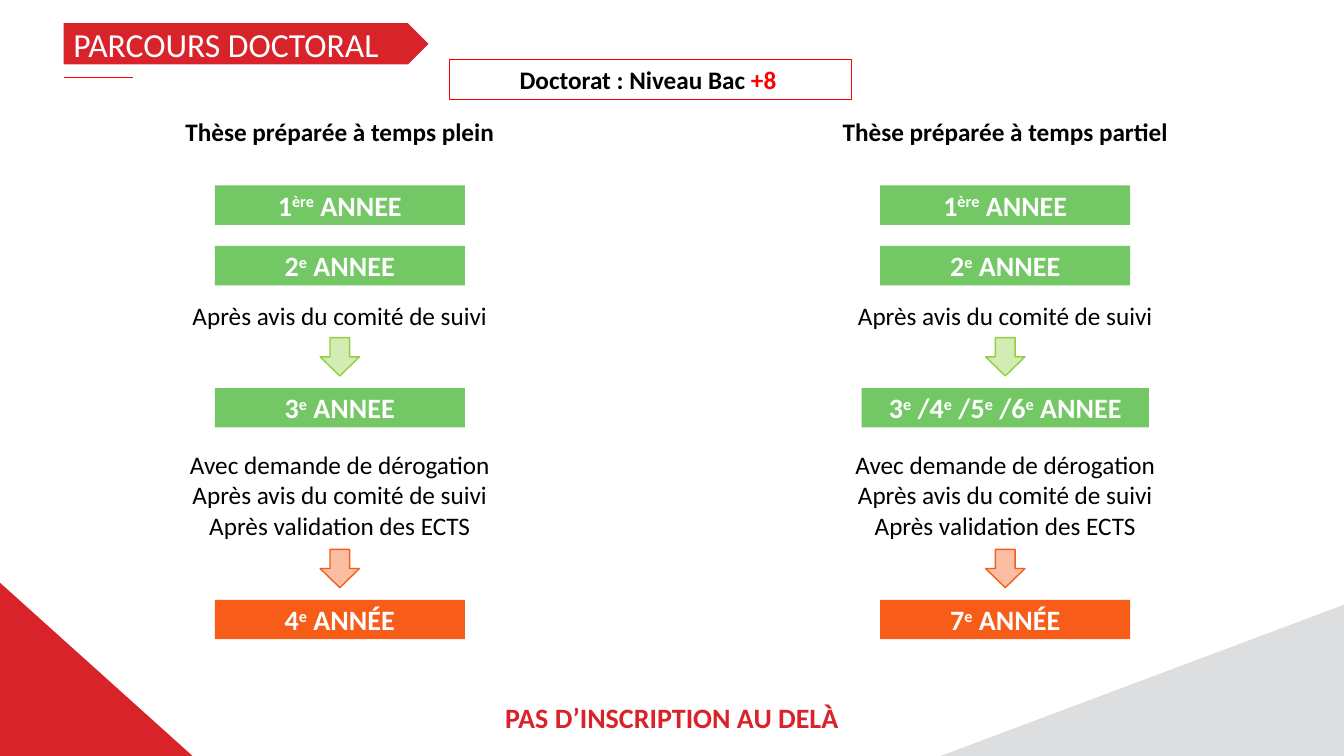
"""Build the doctoral path slide: full-time and part-time thesis timelines."""
from dataclasses import dataclass
from typing import NamedTuple, Optional

from lxml import etree
from pptx import Presentation
from pptx.dml import color
from pptx.enum import shapes, text
from pptx.oxml import ns
from pptx.util import Inches, Pt


@dataclass(frozen=True)
class Theme:
    """Colours and type sizes of the slide."""
    font: str = "Calibri"
    title: int = 24
    strong: int = 20
    body: int = 18
    red: str = "D8232A"
    bright_red: str = "FF0000"
    grey: str = "DCDEE0"
    green: str = "73C764"
    orange: str = "F75C19"
    pale_green: str = "D3ECB3"
    green_edge: str = "90CF40"
    pale_orange: str = "FCBEA3"
    black: str = "000000"
    white: str = "FFFFFF"


THEME = Theme()


class Box(NamedTuple):
    """Left, top, width and height in inches."""
    left: float
    top: float
    width: float
    height: float


class Style(NamedTuple):
    """Type style; marked segments take the accent colour or are raised."""
    size: int
    colour: str
    bold: bool = False
    centred: bool = True
    accent: Optional[str] = None


class Year(NamedTuple):
    """One year bar of a timeline."""
    label: str
    top: float
    fill: str
    width: float = 2.48


class Arrow(NamedTuple):
    """One down arrow between two years."""
    top: float
    fill: str
    edge: str


class Timeline(NamedTuple):
    """One column: heading, centre line and year bars."""
    heading: str
    centre: float
    years: tuple[Year, ...]


TITLE = Style(THEME.title, THEME.white, centred=False)
YEAR = Style(THEME.strong, THEME.white, bold=True)
HEADING = Style(THEME.body, THEME.black, bold=True)
LEVEL = Style(THEME.body, THEME.black, bold=True, accent=THEME.bright_red)
CONDITION = Style(THEME.body, THEME.black)
CLOSING = Style(THEME.strong, THEME.red, bold=True)

FIRST_YEARS = (Year("1^ère^ ANNEE", 1.84, THEME.green),
               Year("2^e^ ANNEE", 2.44, THEME.green))
TIMELINES = (
    Timeline("Thèse préparée à temps plein", 3.37, FIRST_YEARS + (
        Year("3^e^ ANNEE", 3.85, THEME.green),
        Year("4^e^ ANNÉE", 5.95, THEME.orange))),
    Timeline("Thèse préparée à temps partiel", 9.97, FIRST_YEARS + (
        Year("3^e^ /4^e^ /5^e^ /6^e^ ANNEE", 3.85, THEME.green, 2.85),
        Year("7^e^ ANNÉE", 5.95, THEME.orange))),
)
ARROWS = (Arrow(3.35, THEME.pale_green, THEME.green_edge),
          Arrow(5.45, THEME.pale_orange, THEME.orange))
REVIEW = "Après avis du comité de suivi"
EXTENSION = f"Avec demande de dérogation\n{REVIEW}\nAprès validation des ECTS"


def rgb(code: str) -> color.RGBColor:
    """Return the colour for a hex code."""
    return color.RGBColor.from_string(code)


def centred_box(centre: float, top: float, width: float, height: float) -> Box:
    """Return a box centred on a vertical line."""
    return Box(centre - width / 2, top, width, height)


def write(frame, content: str, style: Style) -> None:
    """Write lines of text whose segments between carets are marked."""
    frame.text = "\n" * content.count("\n")
    for paragraph, line in zip(frame.paragraphs, content.split("\n")):
        paragraph.alignment = (text.PP_ALIGN.CENTER if style.centred
                               else text.PP_ALIGN.LEFT)
        for index, segment in enumerate(line.split("^")):
            run = paragraph.add_run()
            run.text = segment
            run.font.name, run.font.size = THEME.font, Pt(style.size)
            run.font.bold = style.bold
            marked = index % 2 == 1
            run.font.color.rgb = rgb(style.accent if marked and style.accent
                                     else style.colour)
            if marked and not style.accent:
                run.font._element.set("baseline", "30000")


def add_block(slide, kind, box: Box, fill: Optional[str] = None,
              edge: Optional[str] = None, weight: float = 1):
    """Add a flat preset shape."""
    block = slide.shapes.add_shape(kind, *map(Inches, box))
    block.shadow.inherit = False
    if fill:
        block.fill.solid()
        block.fill.fore_color.rgb = rgb(fill)
    else:
        block.fill.background()
    if edge:
        block.line.color.rgb = rgb(edge)
        block.line.width = Pt(weight)
    else:
        block.line.fill.background()
    return block


def add_words(slide, box: Box, content: str, style: Style) -> None:
    """Add a text box without wrapping."""
    words = slide.shapes.add_textbox(*map(Inches, box))
    words.text_frame.word_wrap = False
    write(words.text_frame, content, style)


def draw_timeline(slide, timeline: Timeline) -> None:
    """Draw one column of years, conditions and arrows."""
    centre = timeline.centre
    add_words(slide, centred_box(centre, 1.11, 3.99, 0.4), timeline.heading, HEADING)
    for year in timeline.years:
        bar = add_block(slide, shapes.MSO_SHAPE.RECTANGLE,
                        centred_box(centre, year.top, year.width, 0.39), year.fill)
        bar.text_frame.vertical_anchor = text.MSO_ANCHOR.MIDDLE
        write(bar.text_frame, year.label, YEAR)
    add_words(slide, centred_box(centre, 2.93, 3.15, 0.31), REVIEW, CONDITION)
    add_words(slide, centred_box(centre, 4.41, 3.21, 1.01), EXTENSION, CONDITION)
    for arrow in ARROWS:
        add_block(slide, shapes.MSO_SHAPE.DOWN_ARROW,
                  centred_box(centre, arrow.top, 0.39, 0.38), arrow.fill, arrow.edge)


def draw_frame(slide) -> None:
    """Draw the corner triangles, the title banner and its rule."""
    add_block(slide, shapes.MSO_SHAPE.RIGHT_TRIANGLE, Box(0, 5.79, 1.9, 1.71),
              THEME.red, THEME.red)
    grey_corner = add_block(slide, shapes.MSO_SHAPE.RIGHT_TRIANGLE,
                            Box(9.33, 6, 4, 1.5), THEME.grey)
    grey_corner._element.spPr.get_or_add_xfrm().set("flipH", "1")
    banner = add_block(slide, shapes.MSO_SHAPE.PENTAGON,
                       Box(0.63, 0.23, 3.62, 0.41), THEME.red)
    banner.text_frame.vertical_anchor = text.MSO_ANCHOR.MIDDLE
    write(banner.text_frame, "PARCOURS DOCTORAL", TITLE)
    rule = slide.shapes.add_connector(shapes.MSO_CONNECTOR.STRAIGHT,
                                      *map(Inches, (0.63, 0.77, 1.32, 0.77)))
    rule.line.color.rgb = rgb(THEME.bright_red)
    rule.line.width = Pt(0.5)
    etree.SubElement(rule._element.spPr, ns.qn("a:effectLst"))


def main() -> None:
    """Build and save the slide."""
    deck = Presentation()
    deck.slide_width, deck.slide_height = Inches(13.33), Inches(7.5)
    slide = deck.slides.add_slide(deck.slide_layouts[6])
    draw_frame(slide)
    for timeline in TIMELINES:
        draw_timeline(slide, timeline)
    add_words(slide, Box(4.68, 6.9, 3.97, 0.44), "PAS D’INSCRIPTION AU DELÀ", CLOSING)
    level = add_block(slide, shapes.MSO_SHAPE.RECTANGLE, Box(4.46, 0.59, 3.99, 0.4),
                      edge=THEME.bright_red, weight=0.75)
    level.text_frame.vertical_anchor = text.MSO_ANCHOR.TOP
    write(level.text_frame, "Doctorat : Niveau Bac ^+8 ", LEVEL)
    deck.save("out.pptx")


if __name__ == "__main__":
    main()
